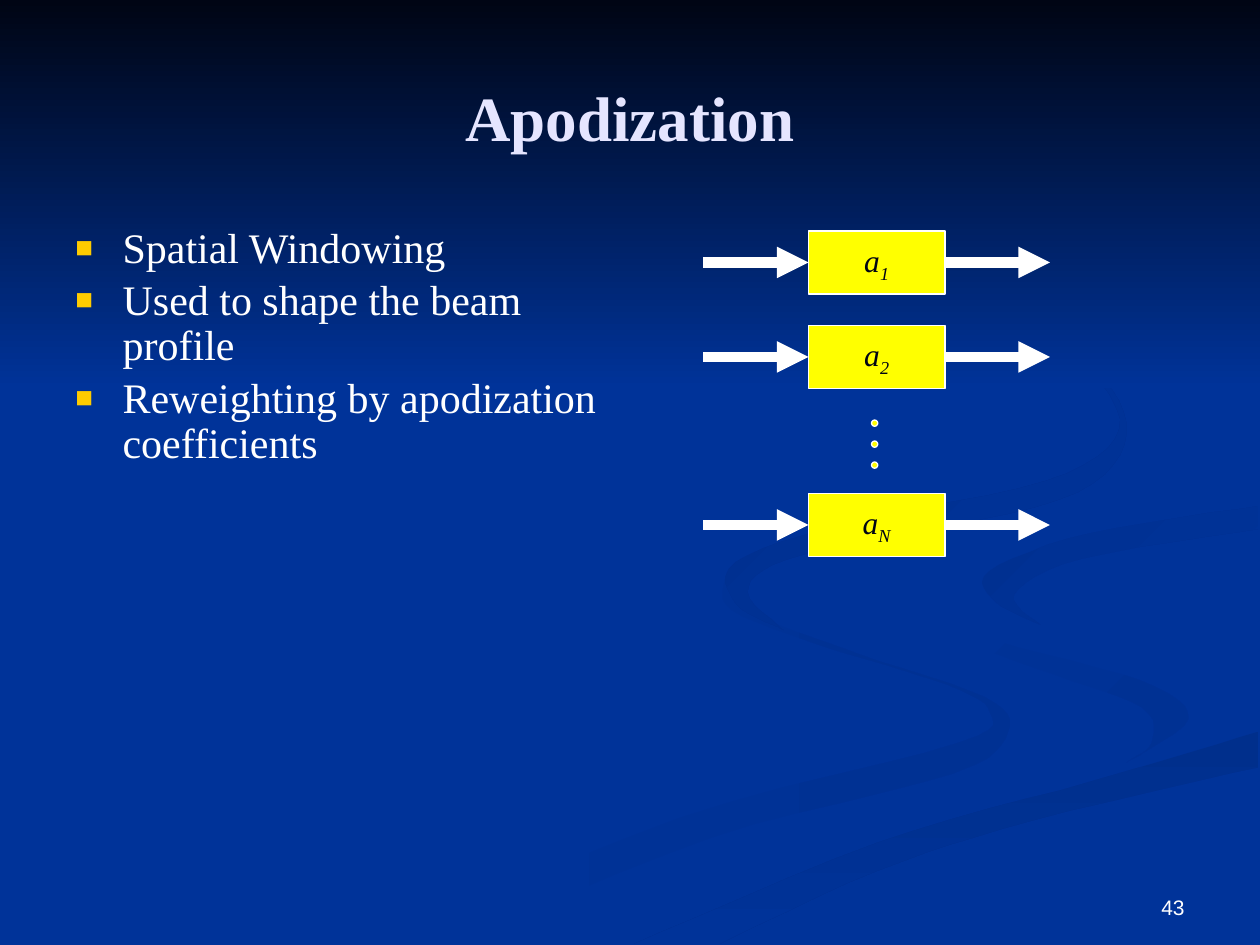
from dataclasses import dataclass
from typing import Any

from lxml.etree import SubElement
from pptx import Presentation
from pptx.dml.color import RGBColor
from pptx.enum.shapes import MSO_CONNECTOR, MSO_SHAPE
from pptx.enum.text import MSO_ANCHOR, PP_ALIGN
from pptx.oxml.ns import qn
from pptx.util import Emu, Pt

PX = 7620
Points = tuple[tuple[int, int], ...]


@dataclass(frozen=True)
class Theme:
    ground: str = "003399"
    night: str = "000514"
    title: str = "E5E5FF"
    text: str = "FFFFFF"
    bullet: str = "FFCC00"
    block: str = "FFFF00"
    serif: str = "Times New Roman"
    sans: str = "Arial"
    title_size: int = 36
    body_size: int = 24
    label_size: int = 18
    number_size: int = 12


@dataclass(frozen=True)
class Area:
    left: int
    top: int
    width: int
    height: int

    def emu(self) -> tuple[Emu, ...]:
        return tuple(Emu(v * PX) for v in (self.left, self.top, self.width, self.height))


@dataclass(frozen=True)
class Ribbon:
    outer: Points
    inner: Points
    start: str
    end: str
    angle: int


@dataclass(frozen=True)
class Weight:
    subscript: str
    top: int


THEME = Theme()
BLOCK_LEFT, BLOCK_WIDTH, BLOCK_HEIGHT, ARROW = 770, 130, 60, 100
CURVE_STEPS = 6
WEIGHTS = (Weight("1", 220), Weight("2", 310), Weight("N", 470))
DOTS = tuple(Area(830, 400 + 20 * i, 6, 6) for i in range(3))
BULLETS = ("Spatial Windowing", "Used to shape the beam profile",
           "Reweighting by apodization coefficients")

RIBBONS = (
    Ribbon(((690, 551), (713, 582), (818, 623), (938, 664), (960, 697), (907, 737),
            (677, 798), (433, 899)),
           ((690, 551), (697, 581), (785, 616), (902, 652), (943, 679), (911, 708),
            (647, 779), (360, 899)),
           THEME.ground, "003193", 0),
    Ribbon(((869, 557), (880, 580), (951, 611), (1086, 648), (1132, 684), (1073, 726)),
           ((869, 557), (895, 600), (1006, 643), (1088, 674), (1097, 707), (1073, 726)),
           THEME.ground, "003193", 45),
    Ribbon(((604, 899), (835, 803), (1040, 744), (1198, 697)),
           ((685, 899), (834, 830), (985, 781), (1198, 731)),
           "002F8C", THEME.ground, 90),
    Ribbon(((1198, 482), (1038, 508), (942, 544), (949, 574), (991, 595)),
           ((1198, 504), (1031, 532), (966, 566), (991, 595)),
           "003091", THEME.ground, 45),
    Ribbon(((914, 280), (1037, 349), (1073, 413), (1026, 469), (887, 505), (749, 533),
            (712, 564), (746, 600)),
           ((914, 280), (1026, 342), (1066, 409), (996, 458), (811, 497), (701, 535),
            (701, 575), (746, 600)),
           "002F8E", THEME.ground, 45),
)


def assign(target: Any, values: dict[str, Any]) -> None:
    for name, value in values.items():
        setattr(target, name, value)


def write(para: Any, text: str, size: int, color: str, **values: Any) -> Any:
    span = para.add_run()
    span.text = text
    assign(span.font, {"name": THEME.serif, "size": Pt(size), **values})
    span.font.color.rgb = RGBColor.from_string(color)
    return span


def blend(a: int, b: int, c: int, d: int, t: float) -> int:
    return round(b + t * (c - a + t * (2 * a - 5 * b + 4 * c - d + t * (3 * (b - c) + d - a))) / 2)


def smooth(points: Points) -> list[tuple[int, int]]:
    padded = (points[0], *points, points[-1])
    curve = [tuple(blend(*axis, step / CURVE_STEPS) for axis in zip(*padded[i:i + 4]))
             for i in range(len(points) - 1) for step in range(CURVE_STEPS)]
    return [*curve, points[-1]]


def fill_gradient(shape: Any, start: str, end: str, angle: int) -> None:
    shape.shadow.inherit = False
    shape.line.fill.background()
    shape.fill.gradient()
    shape.fill.gradient_angle = -angle % 360
    for stop, color in zip(shape.fill.gradient_stops, (start, end)):
        stop.color.rgb = RGBColor.from_string(color)


def draw_ribbon(page: Any, ribbon: Ribbon) -> None:
    outline = smooth(ribbon.outer) + smooth(ribbon.inner)[::-1]
    builder = page.shapes.build_freeform(*outline[0], scale=PX)
    builder.add_line_segments(outline[1:], close=True)
    fill_gradient(builder.convert_to_shape(), ribbon.start, ribbon.end, ribbon.angle)


def draw_shape(page: Any, kind: MSO_SHAPE, area: Area) -> Any:
    shape = page.shapes.add_shape(kind, *area.emu())
    shape.shadow.inherit = False
    shape.fill.solid()
    shape.fill.fore_color.rgb = RGBColor.from_string(THEME.block)
    shape.line.color.rgb = RGBColor.from_string(THEME.text)
    shape.line.width = Pt(0.75)
    return shape


def draw_arrow(page: Any, left: int, y: int) -> Any:
    ends = (Emu(v * PX) for v in (left, y, left + ARROW, y))
    arrow = page.shapes.add_connector(MSO_CONNECTOR.STRAIGHT, *ends)
    arrow.line.color.rgb = RGBColor.from_string(THEME.text)
    arrow.line.width = Pt(6)
    SubElement(arrow.element.spPr.find(qn("a:ln")), qn("a:tailEnd"), type="triangle")
    SubElement(arrow.element.spPr, qn("a:effectLst"))
    return arrow


def draw_weight(page: Any, weight: Weight) -> None:
    box = draw_shape(page, MSO_SHAPE.RECTANGLE,
                     Area(BLOCK_LEFT, weight.top, BLOCK_WIDTH, BLOCK_HEIGHT))
    assign(box.text_frame, {"word_wrap": False, "vertical_anchor": MSO_ANCHOR.MIDDLE})
    para = box.text_frame.paragraphs[0]
    para.alignment = PP_ALIGN.CENTER
    write(para, "a", THEME.label_size, THEME.night, italic=True)
    span = write(para, weight.subscript, THEME.label_size, THEME.night, italic=True)
    span.font._element.set("baseline", "-25000")
    middle = weight.top + BLOCK_HEIGHT // 2
    draw_arrow(page, BLOCK_LEFT - ARROW, middle).end_connect(box, 1)
    draw_arrow(page, BLOCK_LEFT + BLOCK_WIDTH, middle).begin_connect(box, 3)


def add_bullet(para: Any, text: str) -> None:
    assign(para, {"line_spacing": 0.9, "space_before": Pt(4)})
    props = para._p.get_or_add_pPr()
    props.set("marL", str(45 * PX))
    props.set("indent", str(-45 * PX))
    SubElement(SubElement(props, qn("a:buClr")), qn("a:srgbClr"), val=THEME.bullet)
    SubElement(props, qn("a:buSzPct"), val="70000")
    SubElement(props, qn("a:buFont"), typeface=THEME.sans)
    SubElement(props, qn("a:buChar"), char="■")
    write(para, text, THEME.body_size, THEME.text)


def add_text(page: Any, area: Area, anchor: MSO_ANCHOR) -> Any:
    frame = page.shapes.add_textbox(*area.emu()).text_frame
    assign(frame, {"word_wrap": True, "vertical_anchor": anchor})
    return frame


def main() -> None:
    deck = Presentation()
    assign(deck, {"slide_width": Emu(1200 * PX), "slide_height": Emu(900 * PX)})
    page = deck.slides.add_slide(deck.slide_layouts[5])
    page.background.fill.solid()
    page.background.fill.fore_color.rgb = RGBColor.from_string(THEME.ground)
    for ribbon in RIBBONS:
        draw_ribbon(page, ribbon)
    sky = page.shapes.add_shape(MSO_SHAPE.RECTANGLE, *Area(0, 0, 1200, 370).emu())
    fill_gradient(sky, THEME.night, THEME.ground, 90)

    title = page.shapes.title
    sky.element.addnext(title.element)
    assign(title, dict(zip(("left", "top", "width", "height"), Area(60, 36, 1080, 150).emu())))
    title.text_frame.vertical_anchor = MSO_ANCHOR.MIDDLE
    heading = title.text_frame.paragraphs[0]
    heading.alignment = PP_ALIGN.CENTER
    write(heading, "Apodization", THEME.title_size, THEME.title, bold=True)

    body = add_text(page, Area(60, 210, 530, 594), MSO_ANCHOR.TOP)
    for index, text in enumerate(BULLETS):
        add_bullet(body.add_paragraph() if index else body.paragraphs[0], text)
    for weight in WEIGHTS:
        draw_weight(page, weight)
    for dot in DOTS:
        draw_shape(page, MSO_SHAPE.OVAL, dot)

    number = add_text(page, Area(860, 820, 280, 62), MSO_ANCHOR.BOTTOM).paragraphs[0]
    number.alignment = PP_ALIGN.RIGHT
    write(number, "43", THEME.number_size, THEME.text, name=THEME.sans)
    deck.save("out.pptx")


if __name__ == "__main__":
    main()
